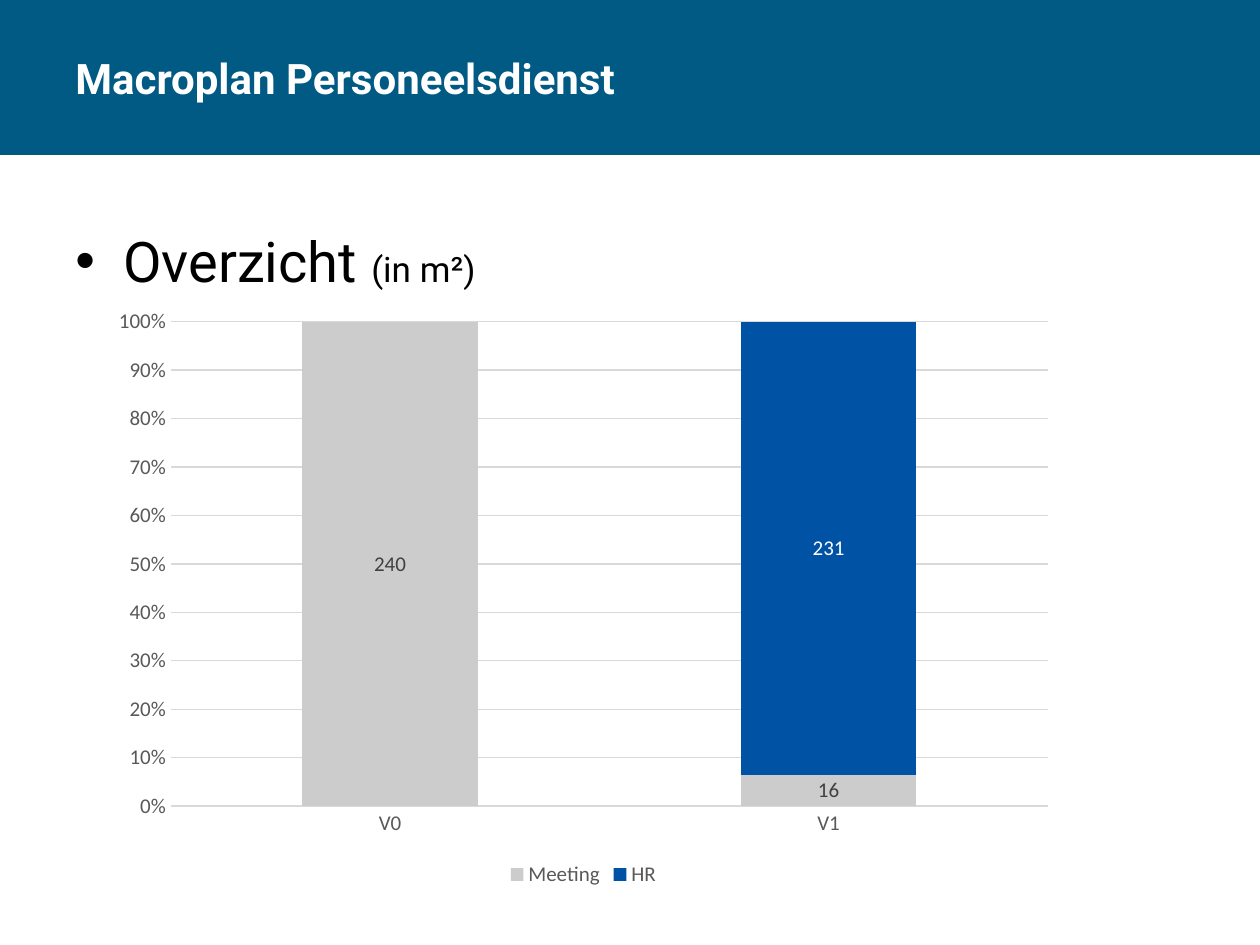
from dataclasses import dataclass

from lxml import etree
from pptx import Presentation
from pptx import util as u
from pptx.chart.data import CategoryChartData
from pptx.dml.color import RGBColor
from pptx.enum import chart as charts, shapes, text
from pptx.oxml.ns import qn


@dataclass(frozen=True)
class Theme:
    banner: str = "005A84"
    white: str = "FFFFFF"
    black: str = "000000"
    axis_text: str = "595959"
    label_text: str = "404040"
    grid: str = "D9D9D9"
    meeting: str = "CCCCCC"
    hr: str = "0052A5"
    text_font: str = "Roboto"
    chart_font: str = "Calibri"
    title_size: int = 24
    body_size: int = 32
    unit_size: int = 20
    chart_size: int = 12


THEME = Theme()


def color(code):
    return RGBColor.from_string(code)


def format_font(font, name, size, code, bold=False):
    font.name = name
    font.size = u.Pt(size)
    font.bold = bold
    font.color.rgb = color(code)


def add_banner(page, width, height):
    banner = page.shapes.add_shape(shapes.MSO_SHAPE.RECTANGLE, 0, 0, width, height)
    banner.shadow.inherit = False
    banner.fill.solid()
    banner.fill.fore_color.rgb = color(THEME.banner)
    banner.line.fill.background()


def add_bullet(para, indent):
    properties = para._p.get_or_add_pPr()
    properties.set("marL", str(indent))
    properties.set("indent", str(-indent))
    etree.SubElement(properties, qn("a:buFont")).set("typeface", "Arial")
    etree.SubElement(properties, qn("a:buChar")).set("char", "•")


def add_text(page, place, spans, code, bold=False, bullet=None,
             anchor=text.MSO_ANCHOR.TOP):
    """Write one paragraph; spans are (wording, size) pairs."""
    box = page.shapes.add_textbox(*map(u.Inches, place))
    frame = box.text_frame
    frame.word_wrap = True
    frame.vertical_anchor = anchor
    para = frame.paragraphs[0]
    if bullet:
        add_bullet(para, bullet)
    for wording, size in spans:
        span = para.add_run()
        span.text = wording
        format_font(span.font, THEME.text_font, size, code, bold)


def style_axis(axis):
    axis.major_tick_mark = charts.XL_TICK_MARK.NONE
    axis.minor_tick_mark = charts.XL_TICK_MARK.NONE
    format_font(axis.tick_labels.font, THEME.chart_font, THEME.chart_size,
                THEME.axis_text)


def style_line(line):
    line.color.rgb = color(THEME.grid)
    line.width = u.Pt(0.75)


def style_series(series, fill, label_color):
    series.format.fill.solid()
    series.format.fill.fore_color.rgb = color(fill)
    labels = series.data_labels
    labels.show_value = True
    labels.number_format = "0;;"  # a zero gets no label
    labels.number_format_is_linked = False
    format_font(labels.font, THEME.chart_font, THEME.chart_size, label_color)


def add_area_chart(page, place):
    data = CategoryChartData()
    data.categories = ["V0", "V1"]
    data.add_series("Meeting", (240, 16))
    data.add_series("HR", (0, 231))
    chart = page.shapes.add_chart(charts.XL_CHART_TYPE.COLUMN_STACKED_100,
                                  *map(u.Inches, place), data).chart
    chart.has_title = False
    format_font(chart.font, THEME.chart_font, THEME.chart_size, THEME.axis_text)

    # Axes and grid
    style_axis(chart.category_axis)
    style_line(chart.category_axis.format.line)
    values = chart.value_axis
    style_axis(values)
    values.tick_labels.number_format = "0%"
    values.tick_labels.number_format_is_linked = False
    values.format.line.fill.background()
    values.has_major_gridlines = True
    style_line(values.major_gridlines.format.line)

    # Legend
    chart.has_legend = True
    chart.legend.position = charts.XL_LEGEND_POSITION.BOTTOM
    chart.legend.include_in_layout = False
    format_font(chart.legend.font, THEME.chart_font, THEME.chart_size,
                THEME.axis_text)

    # Columns
    plot = chart.plots[0]
    plot.gap_width = 150
    plot.overlap = 100
    plot.vary_by_categories = False
    meeting, hr = plot.series
    style_series(meeting, THEME.meeting, THEME.label_text)
    style_series(hr, THEME.hr, THEME.white)


def main():
    deck = Presentation()
    deck.slide_width, deck.slide_height = u.Inches(10), u.Inches(7.5)
    page = deck.slides.add_slide(deck.slide_layouts[6])

    # Title banner
    add_banner(page, deck.slide_width, u.Inches(1.23))
    add_text(page, (0.5, 0, 9, 1.23),
             [("Macroplan Personeelsdienst", THEME.title_size)],
             THEME.white, bold=True, anchor=text.MSO_ANCHOR.MIDDLE)

    # Overview heading and chart
    add_text(page, (0.5, 1.75, 9, 4.95),
             [("Overzicht ", THEME.body_size), ("(in m²)", THEME.unit_size)],
             THEME.black, bullet=u.Inches(0.38))
    add_area_chart(page, (0.79, 2.36, 7.68, 4.72))

    deck.save("out.pptx")


if __name__ == "__main__":
    main()
